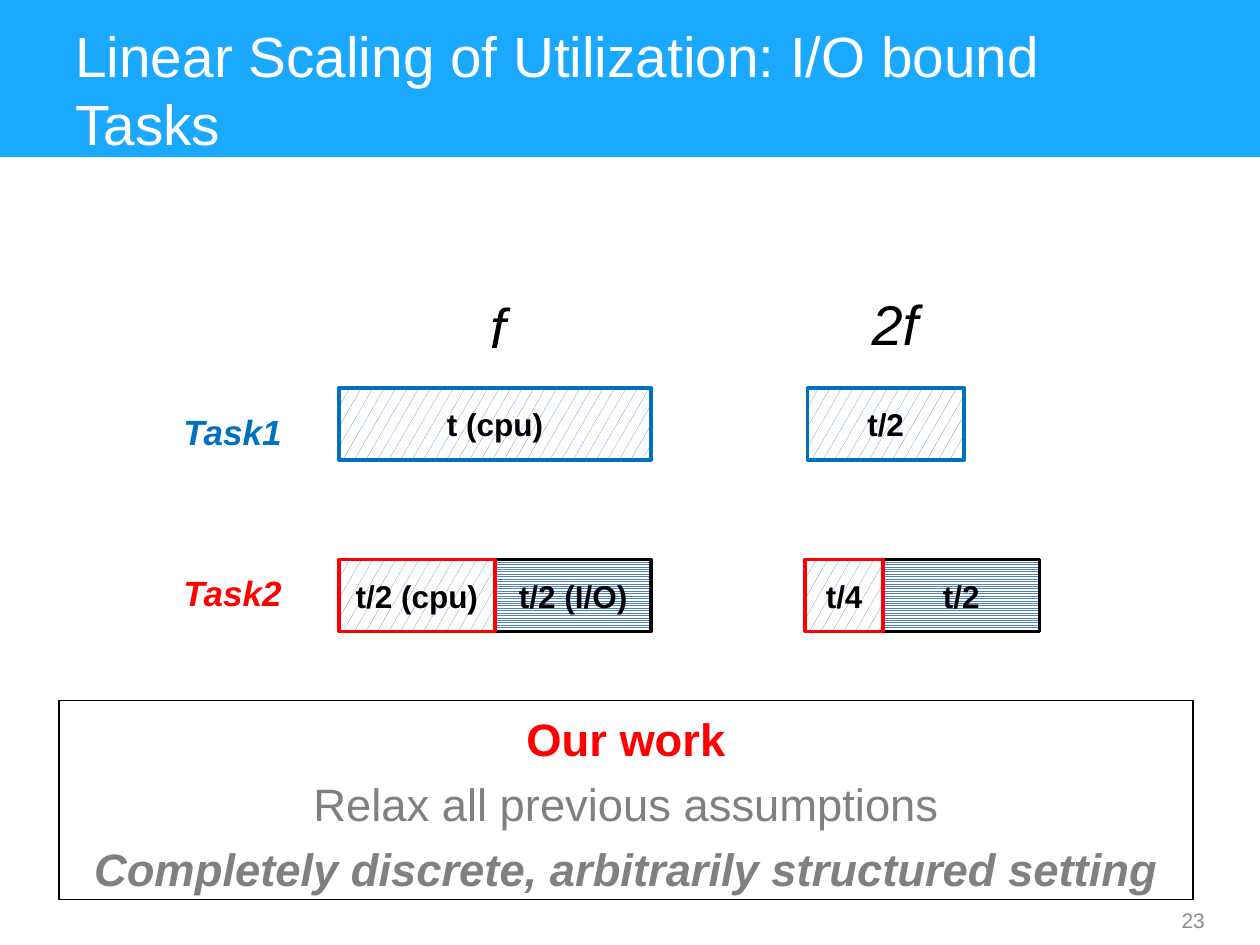
from pptx import Presentation
from pptx.dml.color import RGBColor
from pptx.enum.dml import MSO_PATTERN
from pptx.enum.shapes import MSO_SHAPE
from pptx.enum.text import MSO_ANCHOR, MSO_AUTO_SIZE, PP_ALIGN
from pptx.util import Cm, Pt

RECTANGLE = MSO_SHAPE.RECTANGLE
CPU_PATTERN = MSO_PATTERN.SMALL_CONFETTI
IO_PATTERN = MSO_PATTERN.NARROW_HORIZONTAL
TOP, MIDDLE = MSO_ANCHOR.TOP, MSO_ANCHOR.MIDDLE
LEFT, CENTER, RIGHT = PP_ALIGN.LEFT, PP_ALIGN.CENTER, PP_ALIGN.RIGHT
GROW = MSO_AUTO_SIZE.SHAPE_TO_FIT_TEXT

BLACK, WHITE, GRAY = "000000", "FFFFFF", "808080"
BLUE, RED, HATCH = "0070C0", "FF0000", "4F81BD"


def color(hex_string):
    return RGBColor.from_string(hex_string)


class SlideBuilder:
    font_name = "Arial"
    bar_height = 1.45

    def __init__(self, slide):
        self.slide = slide

    def add_run(self, paragraph, text, size, hex_color, bold=False, italic=False):
        run = paragraph.add_run()
        run.text = text
        font = run.font
        font.name, font.size = self.font_name, Pt(size)
        font.bold, font.italic = bold, italic
        font.color.rgb = color(hex_color)

    def rectangle(self, left, top, width, height, line=None, line_width=0.75):
        shape = self.slide.shapes.add_shape(
            RECTANGLE, Cm(left), Cm(top), Cm(width), Cm(height))
        shape.shadow.inherit = False
        shape.fill.background()
        if line:
            shape.line.color.rgb = color(line)
            shape.line.width = Pt(line_width)
        else:
            shape.line.fill.background()
        shape.text_frame.word_wrap = True
        return shape

    def band(self, width, height, fill):
        shape = self.rectangle(0, 0, width, height)
        shape.fill.solid()
        shape.fill.fore_color.rgb = color(fill)

    def label(self, left, top, width, height, text, size, hex_color, bold=False,
              italic=False, align=LEFT, anchor=TOP, wrap=True, grow=False):
        shape = self.slide.shapes.add_textbox(
            Cm(left), Cm(top), Cm(width), Cm(height))
        frame = shape.text_frame
        frame.word_wrap, frame.vertical_anchor = wrap, anchor
        if grow:
            frame.auto_size = GROW
        paragraph = frame.paragraphs[0]
        paragraph.alignment = align
        self.add_run(paragraph, text, size, hex_color, bold, italic)

    def bar(self, left, top, width, text, pattern, line):
        shape = self.rectangle(left, top, width, self.bar_height, line, 2)
        shape.fill.patterned()
        shape.fill.pattern = pattern
        shape.fill.fore_color.rgb = color(HATCH)
        shape.fill.back_color.rgb = color(WHITE)
        frame = shape.text_frame
        frame.vertical_anchor = MIDDLE
        frame.paragraphs[0].alignment = CENTER
        self.add_run(frame.paragraphs[0], text, 18, BLACK, bold=True)

    def summary(self, left, top, width, height, lines, size):
        frame = self.rectangle(left, top, width, height, BLACK).text_frame
        frame.vertical_anchor = TOP
        frame.margin_top = Cm(0.22)
        for index, (text, hex_color, bold, italic) in enumerate(lines):
            paragraph = frame.add_paragraph() if index else frame.paragraphs[0]
            paragraph.alignment = CENTER
            if index:
                paragraph.space_before = Pt(6)
            self.add_run(paragraph, text, size, hex_color, bold, italic)


def main():
    presentation = Presentation()
    presentation.slide_width, presentation.slide_height = Cm(25.4), Cm(19.05)
    builder = SlideBuilder(
        presentation.slides.add_slide(presentation.slide_layouts[6]))

    # Title band and page number
    builder.band(25.4, 3.17, "1AA9FF")
    builder.label(1.27, 0.43, 22.86, 2.74,
                  "Linear Scaling of Utilization: I/O bound Tasks",
                  32.4, WHITE, anchor=MIDDLE)
    builder.label(18.62, 18.03, 5.92, 1.02, "23", 12, "8C8C8C",
                  align=RIGHT, anchor=MIDDLE)

    # Summary box
    builder.summary(1.19, 14.12, 22.86, 4.01, [
        ("Our work", RED, True, False),
        ("Relax all previous assumptions", GRAY, False, False),
        ("Completely discrete, arbitrarily structured setting", GRAY, True, True),
    ], 25.9)

    # Frequency headings
    builder.label(9.63, 5.77, 2.16, 1.63, "f", 32, BLACK, italic=True, grow=True)
    builder.label(17.32, 5.72, 1.47, 1.63, "2f", 32, BLACK, italic=True,
                  wrap=False, grow=True)

    # Time bars: widths are proportional to running time
    full = 6.3
    half, quarter = full / 2, full / 4
    task1_top, task2_top = 7.82, 11.28
    base_left, double_left = 6.83, 16.23
    for left, top, width, text, pattern, line in [
        (base_left, task1_top, full, "t (cpu)", CPU_PATTERN, BLUE),
        (double_left + 0.05, task1_top, half, "t/2", CPU_PATTERN, BLUE),
        (base_left + half, task2_top, half, "t/2 (I/O)", IO_PATTERN, BLACK),
        (base_left, task2_top, half, "t/2 (cpu)", CPU_PATTERN, RED),
        (double_left + quarter, task2_top, half, "t/2", IO_PATTERN, BLACK),
        (double_left, task2_top, quarter, "t/4", CPU_PATTERN, RED),
    ]:
        builder.bar(left, top, width, text, pattern, line)

    # Task names
    for top, text, hex_color in [(8.15, "Task1", BLUE), (11.4, "Task2", RED)]:
        builder.label(3.45, top, 3.38, 1.12, text, 20, hex_color,
                      bold=True, italic=True, grow=True)

    presentation.save("out.pptx")


if __name__ == "__main__":
    main()
